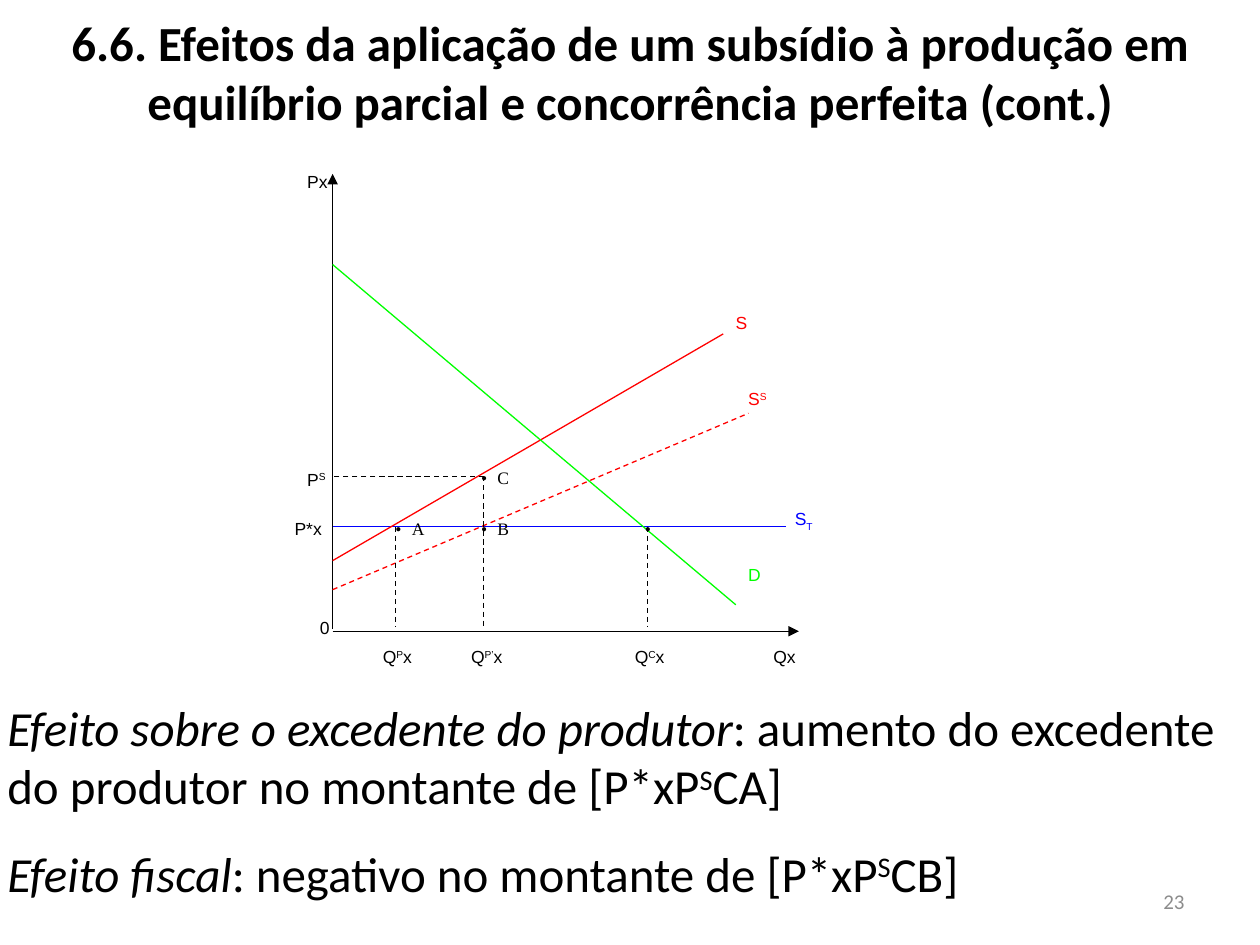
from lxml import etree
from pptx import Presentation
from pptx.dml.color import RGBColor
from pptx.enum.dml import MSO_LINE
from pptx.enum.shapes import MSO_CONNECTOR
from pptx.enum.text import MSO_ANCHOR, MSO_AUTO_SIZE, PP_ALIGN
from pptx.oxml.ns import qn
from pptx.util import Inches, Pt

STRAIGHT = MSO_CONNECTOR.STRAIGHT
DASH = MSO_LINE.DASH
TOP, MIDDLE = MSO_ANCHOR.TOP, MSO_ANCHOR.MIDDLE
NO_FIT, GROW = MSO_AUTO_SIZE.NONE, MSO_AUTO_SIZE.SHAPE_TO_FIT_TEXT
LEFT, CENTER, RIGHT = PP_ALIGN.LEFT, PP_ALIGN.CENTER, PP_ALIGN.RIGHT

BLACK = RGBColor(0, 0, 0)
GRAY = RGBColor(0x8C, 0x8C, 0x8C)
RED = RGBColor(0xFF, 0, 0)
GREEN = RGBColor(0, 0xFF, 0)
BLUE = RGBColor(0, 0, 0xFF)

TITLE = {"name": "Calibri", "size": Pt(28), "bold": True}
BODY = {"name": "Calibri", "size": Pt(28)}
NUMBER = {"name": "Calibri", "size": Pt(12)}
LABEL = {"name": "Arial", "size": Pt(10)}
POINT = {"name": "Times New Roman", "size": Pt(10)}
SUPER, SUB = {"baseline": 30000}, {"baseline": -30000}
ITALIC = {"italic": True}


def place(shape, box):
    shape.left, shape.top, shape.width, shape.height = map(Inches, box)


def write(shape, spans, font, color=BLACK, align=LEFT, anchor=TOP, fit=NO_FIT):
    frame = shape.text_frame
    frame.word_wrap = True
    frame.auto_size = fit
    frame.vertical_anchor = anchor
    para = frame.paragraphs[0]
    para.alignment = align
    for text, changes in spans:
        span = para.add_run()
        span.text = text
        formats = {**font, **changes}
        baseline = formats.pop("baseline", None)
        for name, value in formats.items():
            setattr(span.font, name, value)
        span.font.color.rgb = color
        if baseline:
            span.font._element.set("baseline", str(baseline))
    return para


def add_text(page, box, spans, font, **options):
    return write(page.shapes.add_textbox(*map(Inches, box)), spans, font, **options)


def add_line(page, start, end, color=BLACK, dashed=False, arrow=False):
    line = page.shapes.add_connector(STRAIGHT, *map(Inches, (*start, *end)))
    line.line.color.rgb = color
    line.line.width = Pt(0.75)
    if dashed:
        line.line.dash_style = DASH
    properties = line._element.spPr
    if arrow:
        outline = properties.find(qn("a:ln"))
        etree.SubElement(outline, qn("a:tailEnd"), type="triangle")
    etree.SubElement(properties, qn("a:effectLst"))


def add_title(page, box):
    title = page.shapes.title
    place(title, box)
    text = ("6.6. Efeitos da aplicação de um subsídio à produção em "
            "equilíbrio parcial e concorrência perfeita (cont.)")
    write(title, [(text, {})], TITLE, align=CENTER)


def add_effect(page, box, name, effect, corner):
    spans = [(name, ITALIC), (f": {effect} no montante de [P*xP", {}),
             ("S", SUPER), (f"{corner}]", {})]
    add_text(page, box, spans, BODY, anchor=MIDDLE, fit=GROW)


def add_point(page, box, letter):
    text = f"•\t{letter}" if letter else "•"
    para = add_text(page, box, [(text, {})], POINT)
    if letter:
        tabs = etree.SubElement(para._p.get_or_add_pPr(), qn("a:tabLst"))
        etree.SubElement(tabs, qn("a:tab"), pos=str(Inches(0.13)), algn="l")


def add_market(page, box):
    left, top, width, height = box
    market_price, subsidy_price, foot = 2.8, 2.4, 3.6
    produced, subsidised, consumed = 0.5, 1.2, 2.5

    def at(x, y):
        return left + x, top + y

    lines = [
        ((0, 3.61), (0, 0), {"arrow": True}),
        ((0, height), (width, height), {"arrow": True}),
        ((0, market_price), (3.6, market_price), {"color": BLUE}),
        ((0, 3.07), (3.1, 1.27), {"color": RED}),
        ((0, 3.3), (3.3, 1.9), {"color": RED, "dashed": True}),
        ((0, 0.72), (3.2, 3.42), {"color": GREEN}),
        ((subsidised, subsidy_price), (0, subsidy_price), {"dashed": True}),
    ]
    drops = [(produced, market_price), (subsidised, subsidy_price),
             (consumed, market_price)]
    lines += [((x, y), (x, foot), {"dashed": True}) for x, y in drops]
    for start, end, options in lines:
        add_line(page, at(*start), at(*end), **options)

    points = [(0.4, market_price, "A"), (1.08, subsidy_price, "C"),
              (1.08, market_price, "B"), (2.38, market_price, "")]
    for x, y, letter in points:
        add_point(page, (*at(x, y - 0.12), 0.6, 0.4), letter)

    labels = [
        (3.4, 3.7, [("Qx", {})], BLACK),
        (-0.2, 3.47, [("0", {})], BLACK),
        (-0.4, 2.68, [("P*x", {})], BLACK),
        (-0.3, 2.29, [("P", {}), ("S", SUPER)], BLACK),
        (-0.3, -0.07, [("Px", {})], BLACK),
        (3.1, 1.05, [("S", {})], RED),
        (3.2, 1.65, [("S", {}), ("S", SUPER)], RED),
        (3.57, 2.6, [("S", {}), ("T", SUB)], BLUE),
        (3.2, 3.05, [("D", {})], GREEN),
    ]
    quantities = [(produced, "P"), (subsidised, "P’"), (consumed, "C")]
    labels += [(x - 0.2, 3.7, [("Q", {}), (mark, SUPER), ("x", {})], BLACK)
               for x, mark in quantities]
    for x, y, spans, color in labels:
        add_text(page, (*at(x, y), 0.6, 0.4), spans, LABEL, color=color)


def main():
    deck = Presentation()
    deck.slide_width, deck.slide_height = Inches(10), Inches(7.5)
    page = deck.slides.add_slide(deck.slide_layouts[5])
    add_title(page, (0, 0.05, 10, 1.04))
    add_market(page, (2.64, 1.38, 3.7, 3.63))
    add_effect(page, (-0.04, 5.48, 10, 1.04), "Efeito sobre o excedente do produtor",
               "aumento do excedente do produtor", "CA")
    add_effect(page, (-0.04, 6.64, 10, 0.57), "Efeito fiscal", "negativo", "CB")
    add_text(page, (7.17, 6.95, 2.33, 0.4), [("23", {})], NUMBER,
             color=GRAY, align=RIGHT, anchor=MIDDLE)
    deck.save("out.pptx")


if __name__ == "__main__":
    main()
